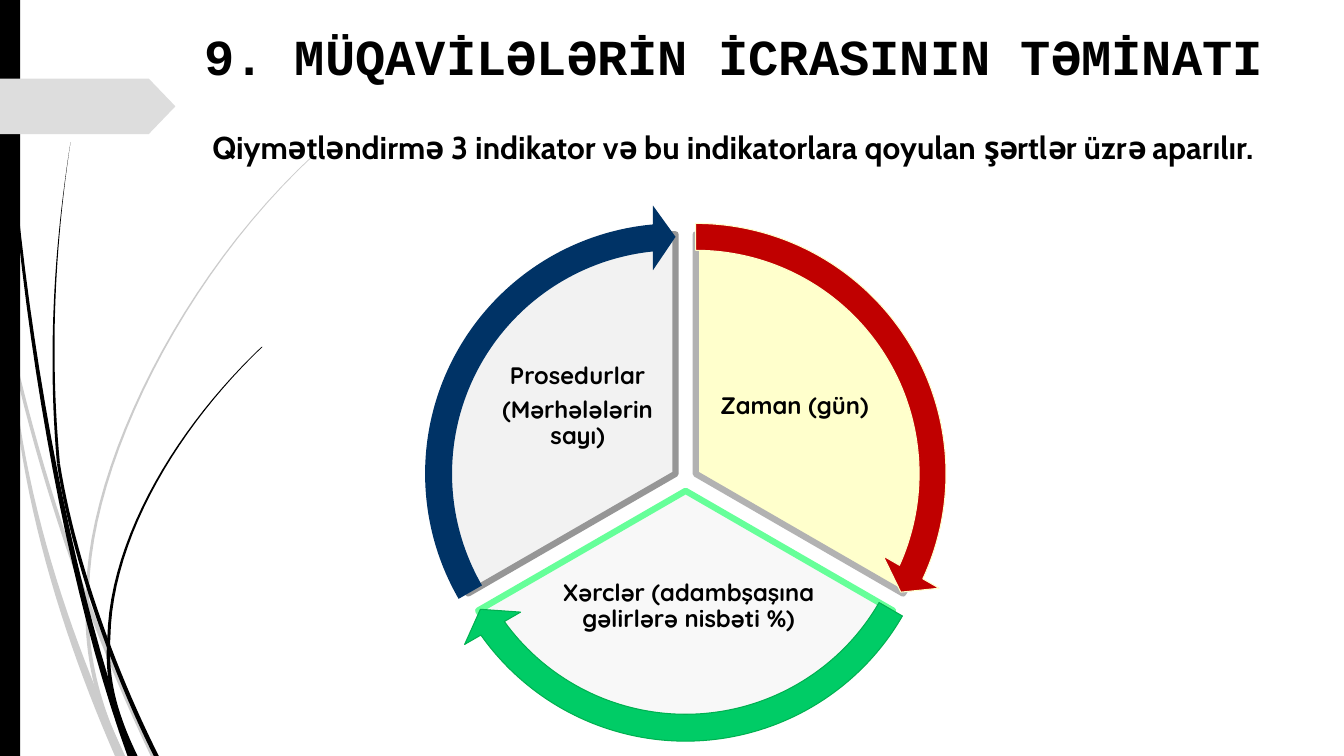
"""Build the contract enforcement slide with its three-indicator cycle."""
from pptx import Presentation
from pptx.dml.color import RGBColor
from pptx.enum.shapes import MSO_SHAPE
from pptx.enum.text import MSO_ANCHOR, PP_ALIGN
from pptx.util import Inches, Pt

BLACK = RGBColor(0x00, 0x00, 0x00)
PALE = RGBColor(0xCC, 0xCC, 0xCC)
TAB_GREY = RGBColor(0xDD, 0xDD, 0xDD)
CREAM = RGBColor(0xFF, 0xFF, 0xCC)
MIST = RGBColor(0xF8, 0xF8, 0xF8)
FOG = RGBColor(0xF2, 0xF2, 0xF2)
SILVER = RGBColor(0xB2, 0xB2, 0xB2)
MINT = RGBColor(0x66, 0xFF, 0x99)
STEEL = RGBColor(0x96, 0x96, 0x96)
RED = RGBColor(0xC0, 0x00, 0x00)
GREEN = RGBColor(0x00, 0xCC, 0x66)
DEEP_GREEN = RGBColor(0x00, 0xB0, 0x50)
NAVY = RGBColor(0x00, 0x33, 0x66)

prs = Presentation()
prs.slide_width, prs.slide_height = Inches(13.33), Inches(7.5)
slide = prs.slides.add_slide(prs.slide_layouts[5])
shapes = slide.shapes


def paint(shape, fill, edge=None, width=0):
    shape.shadow.inherit = False
    shape.fill.solid()
    shape.fill.fore_color.rgb = fill
    if edge is None:
        shape.line.fill.background()
    else:
        shape.line.color.rgb = edge
        shape.line.width = Pt(width)


def write(frame, lines, font, size):
    frame.word_wrap = True
    frame.text = "\n".join(lines)
    for paragraph in frame.paragraphs:
        paragraph.alignment = PP_ALIGN.CENTER
        paragraph.font.name = font
        paragraph.font.size = Pt(size)
        paragraph.font.bold = True
        paragraph.font.color.rgb = BLACK


# Each blade: colour, four Bezier points, width at its start and at its end
BLADES = [
    (PALE, (0, 2.9), (0.3, 4.43), (0.8, 6), (1.52, 7.5), 0.03, 0.05),
    (PALE, (0.11, 3.5), (0.2, 4.9), (0.65, 6.3), (1.19, 7.5), 0.01, 0.1),
    (PALE, (3.12, 1.53), (1.8, 2.75), (0.9, 4.6), (0.87, 5.84), 0.01, 0.03),
    (PALE, (0.87, 5.84), (0.83, 6.5), (0.98, 7), (1.21, 7.5), 0.03, 0.05),
    (BLACK, (0.03, 0), (0.1, 2.6), (0.6, 5.6), (1.3, 7.5), 0.01, 0.07),
    (BLACK, (0.7, 1.41), (0.54, 2.45), (0.48, 3.5), (0.58, 4.6), 0, 0.03),
    (BLACK, (0.58, 4.6), (0.72, 5.5), (1.1, 6.6), (1.55, 7.5), 0.03, 0.05),
    (BLACK, (2.6, 3.44), (1.8, 4.2), (1.1, 5.3), (1.08, 6.33), 0.01, 0.03),
    (BLACK, (1.08, 6.33), (1.05, 6.75), (1.15, 7.1), (1.34, 7.5), 0.03, 0.05),
]
STEPS = 24
for color, *curve, start_width, end_width in BLADES:
    left_side, right_side = [], []
    for step in range(STEPS + 1):
        t = step / STEPS
        weights = ((1 - t) ** 3, 3 * t * (1 - t) ** 2, 3 * t ** 2 * (1 - t), t ** 3)
        x, y = (sum(w * point[axis] for w, point in zip(weights, curve)) for axis in (0, 1))
        half = (start_width + (end_width - start_width) * t) / 2
        left_side.append((Inches(x - half), Inches(y)))
        right_side.append((Inches(x + half), Inches(y)))
    outline = left_side + right_side[::-1]
    builder = shapes.build_freeform(*outline[0])
    builder.add_line_segments(outline[1:], close=True)
    paint(builder.convert_to_shape(), color)

side_bar = shapes.add_shape(MSO_SHAPE.RECTANGLE, 0, 0, Inches(0.2), prs.slide_height)
paint(side_bar, BLACK)
page_tab = shapes.add_shape(MSO_SHAPE.PENTAGON, 0, Inches(0.78), Inches(1.74), Inches(0.55))
page_tab.adjustments[0] = 0.48
paint(page_tab, TAB_GREY)

title = shapes.title
title.left, title.top = Inches(1.83), Inches(0.2)
title.width, title.height = Inches(10.89), Inches(1.03)
title.text_frame.vertical_anchor = MSO_ANCHOR.TOP
write(title.text_frame, ["9. MÜQAVİLƏLƏRİN İCRASININ TƏMİNATI"], "Courier New", 36)

subtitle = shapes.add_textbox(title.left, Inches(1.22), title.width, Inches(0.73))
write(subtitle.text_frame,
      ["Qiymətləndirmə 3 indikator və bu indikatorlara qoyulan şərtlər üzrə aparılır."],
      "Cabin", 22.5)

# Sector centre, sector angles, sector fill and edge, label box, label lines
SECTORS = [
    (6.9, 4.7, (162, 18), CREAM, SILVER, (7.03, 3.33, 1.7, 1.41), ["Zaman (gün)"]),
    (6.8, 4.87, (18, 90), MIST, MINT, (5.56, 5.58, 2.54, 0.88),
     ["Xərclər (adambşaşına gəlirlərə nisbəti %)"]),
    (6.7, 4.7, (90, 162), FOG, STEEL, (4.88, 3.33, 1.7, 1.41),
     ["Prosedurlar", "(Mərhələlərin sayı)"]),
]
SECTOR_SIZE = 4.75
for center_x, center_y, angles, fill, edge, label_box, lines in SECTORS:
    sector = shapes.add_shape(
        MSO_SHAPE.PIE, Inches(center_x - SECTOR_SIZE / 2), Inches(center_y - SECTOR_SIZE / 2),
        Inches(SECTOR_SIZE), Inches(SECTOR_SIZE))
    sector.adjustments[0], sector.adjustments[1] = angles
    paint(sector, fill, edge, 4.5)
    label = shapes.add_textbox(*(Inches(length) for length in label_box)).text_frame
    label.margin_left = label.margin_right = Inches(0.02)
    label.margin_top = label.margin_bottom = Inches(0.02)
    label.vertical_anchor = MSO_ANCHOR.MIDDLE
    write(label, lines, "Quicksand", 17)
    for paragraph in label.paragraphs:
        paragraph.line_spacing = 0.9
        paragraph.space_after = Pt(6)

# Head angle, tail angle, fill and edge of the arrow around each sector
ARROWS = [
    (14.72, 162, RED, CREAM),
    (86.72, 18, GREEN, DEEP_GREEN),
    (158.73, 90, NAVY, None),
]
ARROW_SIZE = 5.34
BAND, HEAD_SWEEP, HEAD_WIDTH = 0.05, 3.28, 0.06
for (center_x, center_y, *_), (head, tail, fill, edge) in zip(SECTORS, ARROWS):
    arrow = shapes.add_shape(
        MSO_SHAPE.CIRCULAR_ARROW,
        Inches(center_x - ARROW_SIZE / 2), Inches(center_y - ARROW_SIZE / 2),
        Inches(ARROW_SIZE), Inches(ARROW_SIZE))
    for index, value in enumerate((BAND, HEAD_SWEEP, head, tail, HEAD_WIDTH)):
        arrow.adjustments[index] = value
    paint(arrow, fill, edge, 0.75)

prs.save("out.pptx")
